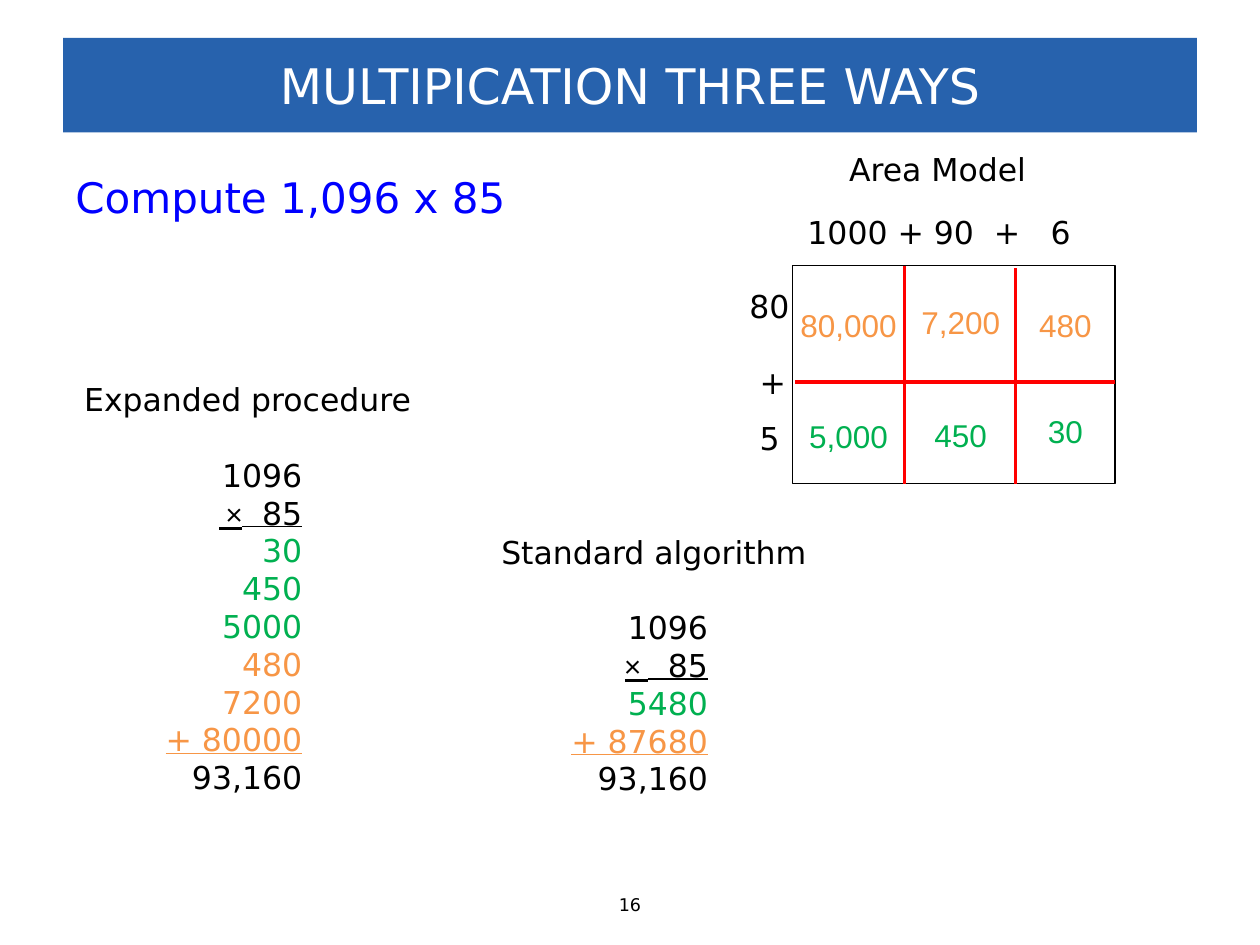
from dataclasses import dataclass

from lxml import etree
from pptx import Presentation
from pptx.dml.color import RGBColor
from pptx.enum.shapes import MSO_CONNECTOR, MSO_SHAPE
from pptx.enum.text import MSO_ANCHOR, MSO_AUTO_SIZE, PP_ALIGN
from pptx.oxml.ns import qn
from pptx.util import Inches, Pt

STRAIGHT = MSO_CONNECTOR.STRAIGHT
RECTANGLE = MSO_SHAPE.RECTANGLE
MIDDLE = MSO_ANCHOR.MIDDLE
FIXED = MSO_AUTO_SIZE.NONE
LEFT, CENTER = PP_ALIGN.LEFT, PP_ALIGN.CENTER


@dataclass(frozen=True)
class Theme:
    main_font: str = "DejaVu Sans"
    cell_font: str = "Arial"
    sign_font: str = "Calibri"
    title_size: int = 28
    task_size: int = 24
    body_size: int = 18
    number_size: int = 10
    band: str = "2762AD"
    white: str = "FFFFFF"
    black: str = "000000"
    blue: str = "0000FF"
    red: str = "FF0000"
    ones: str = "00B050"
    tens: str = "F79646"


THEME = Theme()
SUM_TAB = 1.8
BLANK_LINE = 21.5


def color(value):
    return RGBColor.from_string(value)


def add_span(para, text, ink=THEME.black, **changes):
    span = para.add_run()
    span.text = text
    values = {"name": THEME.main_font, "size": Pt(THEME.body_size)} | changes
    for name, value in values.items():
        setattr(span.font, name, value)
    span.font.color.rgb = color(ink)


def set_tabs(para, stops):
    tab_list = etree.SubElement(para._p.get_or_add_pPr(), qn("a:tabLst"))
    for place, side in stops:
        etree.SubElement(tab_list, qn("a:tab"), pos=str(Inches(place)), algn=side)


def set_indent(para, indent):
    para._p.get_or_add_pPr().set("marL", str(Inches(indent)))


def add_box(shapes, left, top, width, height, wrap=True):
    box = shapes.add_textbox(*map(Inches, (left, top, width, height)))
    box.text_frame.word_wrap = wrap
    box.text_frame.auto_size = FIXED
    return box.text_frame


def add_label(shapes, text, place, ink=THEME.black, align=LEFT, wrap=True, **changes):
    para = add_box(shapes, *place, wrap).paragraphs[0]
    para.alignment = align
    add_span(para, text, ink, **changes)
    return para


def add_title(page, text):
    title = page.shapes.title
    title.left, title.top, title.width, title.height = map(Inches, (0.5, 0.3, 9, 0.75))
    title.fill.solid()
    title.fill.fore_color.rgb = color(THEME.band)
    frame = title.text_frame
    frame.auto_size = FIXED
    frame.vertical_anchor = MIDDLE
    frame.paragraphs[0].alignment = CENTER
    add_span(frame.paragraphs[0], text, THEME.white, size=Pt(THEME.title_size))


def add_line(shapes, *ends):
    line = shapes.add_connector(STRAIGHT, *map(Inches, ends))
    line.line.color.rgb = color(THEME.red)
    line.line.width = Pt(2)
    etree.SubElement(line._element.spPr, qn("a:effectLst"))


def add_factor_column(shapes):
    frame = add_box(shapes, 5.85, 2.23, 0.56, 1.48)
    for index, (text, indent, gap) in enumerate(
        [("80", 0, 0), ("+", 0.08, BLANK_LINE), ("5", 0.08, BLANK_LINE / 2)]
    ):
        para = frame.add_paragraph() if index else frame.paragraphs[0]
        set_indent(para, indent)
        para.space_before = Pt(gap)
        add_span(para, text)


def add_area_model(page):
    shapes = page.shapes.add_group_shape().shapes
    add_label(shapes, "Area Model", (6.64, 1.14, 1.85, 0.4))
    factors = add_label(shapes, "1000 + 90\t+\t6", (6.31, 1.64, 2.55, 0.4))
    set_tabs(factors, [(1.48, "l"), (1.93, "l")])
    add_factor_column(shapes)

    frame = shapes.add_shape(RECTANGLE, *map(Inches, (6.29, 2.11, 2.56, 1.73)))
    frame.shadow.inherit = False
    frame.fill.solid()
    frame.fill.fore_color.rgb = color(THEME.white)
    frame.line.color.rgb = color(THEME.black)
    frame.line.width = Pt(0.75)
    add_line(shapes, 7.18, 2.11, 7.18, 3.84)
    add_line(shapes, 8.06, 2.13, 8.06, 3.84)
    add_line(shapes, 6.31, 3.03, 8.85, 3.03)

    columns = [(6.25, 0.97), (7.16, 0.93), (8.12, 0.67)]
    rows = [
        (THEME.tens, [("80,000", 2.38), ("7,200", 2.36), ("480", 2.38)]),
        (THEME.ones, [("5,000", 3.26), ("450", 3.25), ("30", 3.22)]),
    ]
    for ink, products in rows:
        for (left, width), (text, top) in zip(columns, products):
            place = (left, top, width, 0.4)
            add_label(shapes, text, place, ink, CENTER, name=THEME.cell_font)


def add_sum(page, place, heading, indent, sign, partials):
    frame = add_box(page.shapes, *place)
    set_indent(frame.paragraphs[0], indent)
    add_span(frame.paragraphs[0], heading)
    rows = [
        [("1096", THEME.black, {})],
        [
            (sign, THEME.black, {"underline": True, "name": THEME.sign_font}),
            ("  85", THEME.black, {"underline": True}),
        ],
        *[[(text, ink, {"underline": text.startswith("+")})] for text, ink in partials],
        [("93,160", THEME.black, {})],
    ]
    for index, spans in enumerate(rows):
        para = frame.add_paragraph()
        set_tabs(para, [(SUM_TAB, "r")])
        if index == 0:
            para.space_before = Pt(BLANK_LINE)
        add_span(para, "\t")
        for text, ink, changes in spans:
            add_span(para, text, ink, **changes)


def main():
    deck = Presentation()
    deck.slide_width, deck.slide_height = Inches(10), Inches(7.5)
    page = deck.slides.add_slide(deck.slide_layouts[5])
    add_title(page, "MULTIPICATION THREE WAYS")
    add_label(page.shapes, "Compute 1,096 x 85", (0.5, 1.31, 3.68, 0.5),
              THEME.blue, size=Pt(THEME.task_size))
    add_area_model(page)
    add_sum(page, (0.5, 2.97, 2.89, 3.43), "Expanded procedure", 0.07, " ×", [
        ("30", THEME.ones), ("450", THEME.ones), ("5000", THEME.ones),
        ("480", THEME.tens), ("7200", THEME.tens), ("+ 80000", THEME.tens),
    ])
    add_sum(page, (3.72, 4.18, 2.89, 2.22), "Standard algorithm", 0.16, "× ", [
        ("5480", THEME.ones), ("+ 87680", THEME.tens),
    ])
    add_label(page.shapes, "16", (4.78, 7.05, 0.44, 0.27), align=CENTER,
              wrap=False, size=Pt(THEME.number_size))
    deck.save("out.pptx")


if __name__ == "__main__":
    main()
